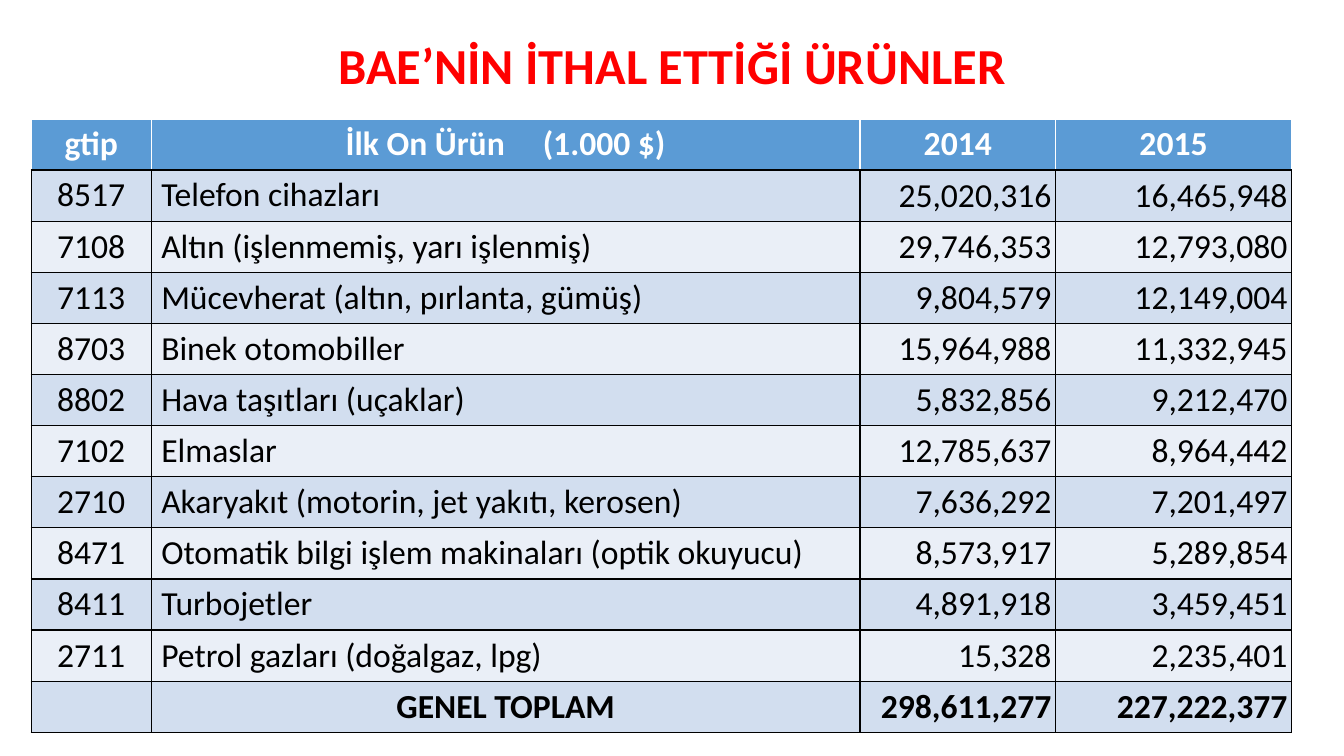
from lxml.etree import SubElement
from pptx import Presentation
from pptx.dml.color import RGBColor
from pptx.enum.text import MSO_ANCHOR as Anchor, PP_ALIGN as Align
from pptx.oxml.ns import qn
from pptx.util import Inches, Pt

RED = RGBColor(0xFF, 0x00, 0x00)
BLACK = RGBColor(0x00, 0x00, 0x00)
WHITE = RGBColor(0xFF, 0xFF, 0xFF)
HEADER_BLUE = RGBColor(0x5B, 0x9B, 0xD5)
BANDS = (RGBColor(0xEA, 0xEF, 0xF7), RGBColor(0xD2, 0xDE, 0xEF))
FONT = "Calibri"

COLUMN_WIDTHS = (1.19, 7.03, 1.94, 2.34)
COLUMN_ALIGNS = (Align.CENTER, Align.LEFT, Align.RIGHT, Align.RIGHT)
ROW_HEIGHT = 0.504
FIRST_AMOUNT_COLUMN = 2
AMOUNT_INSET = Inches(0.04)

HEADER = ("gtip", "İlk On Ürün     (1.000 $)", "2014", "2015")
PRODUCTS = (
    ("8517", "Telefon cihazları", "25,020,316", "16,465,948"),
    ("7108", "Altın (işlenmemiş, yarı işlenmiş)", "29,746,353", "12,793,080"),
    ("7113", "Mücevherat (altın, pırlanta, gümüş)", "9,804,579", "12,149,004"),
    ("8703", "Binek otomobiller", "15,964,988", "11,332,945"),
    ("8802", "Hava taşıtları (uçaklar)", "5,832,856", "9,212,470"),
    ("7102", "Elmaslar", "12,785,637", "8,964,442"),
    ("2710", "Akaryakıt (motorin, jet yakıtı, kerosen)", "7,636,292", "7,201,497"),
    ("8471", "Otomatik bilgi işlem makinaları (optik okuyucu)", "8,573,917", "5,289,854"),
    ("8411", "Turbojetler", "4,891,918", "3,459,451"),
    ("2711", "Petrol gazları (doğalgaz, lpg)", "15,328", "2,235,401"),
)
TOTAL = ("", "GENEL TOPLAM", "298,611,277", "227,222,377")


def write(paragraph, text, size, color, bold, align):
    """Put formatted text in a paragraph."""
    paragraph.text = text
    paragraph.alignment = align
    for font in [paragraph.font] + [run.font for run in paragraph.runs]:
        font.name, font.size, font.bold = FONT, Pt(size), bold
        font.color.rgb = color


def add_heading(slide, text):
    """Place and format the slide title."""
    heading = slide.shapes.title
    heading.left, heading.top = Inches(0.92), Inches(0.4)
    heading.width, heading.height = Inches(11.5), Inches(0.55)
    heading.text_frame.vertical_anchor = Anchor.MIDDLE
    line = heading.text_frame.paragraphs[0]
    write(line, text, 36, RED, True, Align.CENTER)
    line.line_spacing = 0.9


def draw_borders(cell, side_color, bottom_color):
    """Draw one-point lines around a cell."""
    properties = cell._tc.get_or_add_tcPr()
    for side in "LRTB":
        color = bottom_color if side == "B" else side_color
        border = SubElement(properties, qn(f"a:ln{side}"), w=str(Pt(1)))
        SubElement(SubElement(border, qn("a:solidFill")), qn("a:srgbClr"), val=str(color))


def fill_row(table, row, texts, aligns, bold):
    """Write and colour one table row."""
    is_header = row == 0
    for column, (text, align) in enumerate(zip(texts, aligns)):
        cell = table.cell(row, column)
        draw_borders(cell, WHITE if is_header else BLACK, BLACK)
        cell.fill.solid()
        cell.fill.fore_color.rgb = HEADER_BLUE if is_header else BANDS[row % 2]
        ink = WHITE if is_header else BLACK
        write(cell.text_frame.paragraphs[0], text, 24, ink, bold, align)
        if column >= FIRST_AMOUNT_COLUMN and not is_header:
            cell.vertical_anchor = Anchor.MIDDLE
            cell.margin_left = cell.margin_right = AMOUNT_INSET
            cell.margin_top = cell.margin_bottom = AMOUNT_INSET


def add_imports_table(slide):
    """Add the table of imported products with its total."""
    row_count = len(PRODUCTS) + 2
    table = slide.shapes.add_table(
        row_count, len(HEADER), Inches(0.31), Inches(1.18),
        Inches(sum(COLUMN_WIDTHS)), Inches(ROW_HEIGHT * row_count)).table
    for column, width in zip(table.columns, COLUMN_WIDTHS):
        column.width = Inches(width)
    fill_row(table, 0, HEADER, [Align.CENTER] * len(HEADER), True)
    for row, product in enumerate(PRODUCTS, start=1):
        fill_row(table, row, product, COLUMN_ALIGNS, False)
    total_aligns = (Align.CENTER, Align.CENTER, Align.RIGHT, Align.RIGHT)
    fill_row(table, row_count - 1, TOTAL, total_aligns, True)


def main():
    """Build the slide and save it."""
    deck = Presentation()
    deck.slide_width, deck.slide_height = Inches(13.33), Inches(7.5)
    slide = deck.slides.add_slide(deck.slide_layouts[5])
    add_heading(slide, "BAE’NİN İTHAL ETTİĞİ ÜRÜNLER")
    add_imports_table(slide)
    deck.save("out.pptx")


if __name__ == "__main__":
    main()
